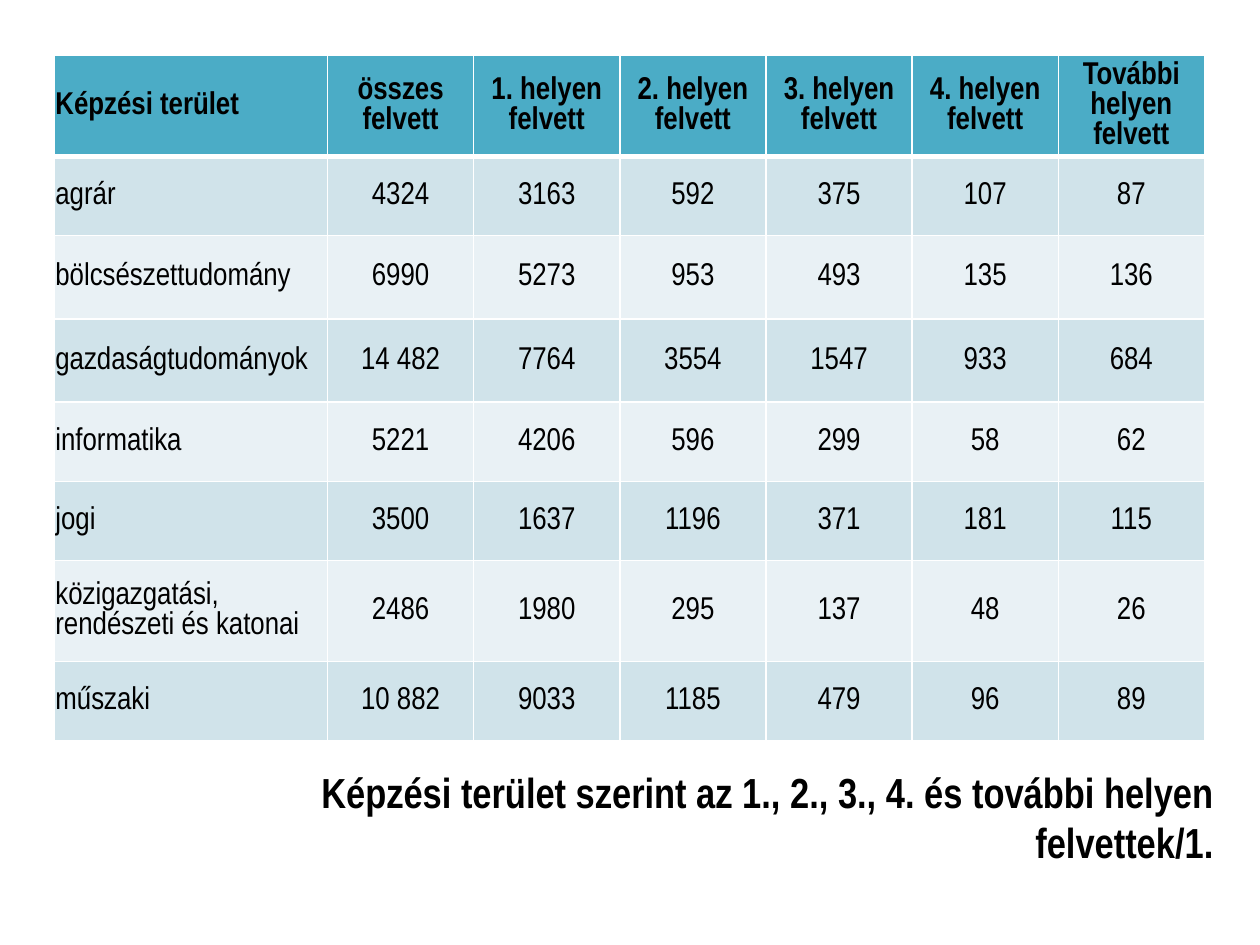
from lxml.etree import SubElement
from pptx import Presentation
from pptx.dml.color import RGBColor
from pptx.enum.text import MSO_ANCHOR, PP_ALIGN
from pptx.oxml.ns import qn
from pptx.util import Inches, Pt

HEADINGS = ["Képzési terület", "összes felvett", "1. helyen felvett", "2. helyen felvett",
            "3. helyen felvett", "4. helyen felvett", "További helyen felvett"]
ADMISSIONS = [
    ["agrár", "4324", "3163", "592", "375", "107", "87"],
    ["bölcsészettudomány", "6990", "5273", "953", "493", "135", "136"],
    ["gazdaságtudományok", "14 482", "7764", "3554", "1547", "933", "684"],
    ["informatika", "5221", "4206", "596", "299", "58", "62"],
    ["jogi", "3500", "1637", "1196", "371", "181", "115"],
    ["közigazgatási, rendészeti és katonai", "2486", "1980", "295", "137", "48", "26"],
    ["műszaki", "10 882", "9033", "1185", "479", "96", "89"],
]
CAPTION = "Képzési terület szerint az 1., 2., 3., 4. és további helyen felvettek/1."
FIELD_WIDTH, COUNT_WIDTH = 2.17, 1.16
ROW_HEIGHTS = [0.8, 0.63, 0.66, 0.66, 0.63, 0.63, 0.8, 0.63]
HEADER_FILL, BAND_FILLS = "4BACC6", ["D0E3EA", "E9F1F5"]
TEXT_COLOUR, RULE_COLOUR = "000000", "FFFFFF"
CELL_FORMAT = {"margin_left": Inches(0.01), "margin_right": Inches(0.01),
               "margin_top": Inches(0.01), "margin_bottom": 0,
               "vertical_anchor": MSO_ANCHOR.MIDDLE}
CAPTION_FORMAT = {"word_wrap": True, "vertical_anchor": MSO_ANCHOR.TOP,
                  "margin_left": Inches(0.1), "margin_right": Inches(0.1),
                  "margin_top": Inches(0.05), "margin_bottom": Inches(0.05)}


def colour(hex_value):
    """Turn a hex string into a colour."""
    return RGBColor.from_string(hex_value)


def apply(target, values):
    """Set every attribute named in a dict of format values."""
    for name, value in values.items():
        setattr(target, name, value)


def write(frame, wording, size, bold, alignment):
    """Put one formatted, single-spaced paragraph into a text frame."""
    frame.text = wording
    paragraph = frame.paragraphs[0]
    apply(paragraph, {"alignment": alignment, "line_spacing": 1.0, "space_before": Pt(0)})
    font = paragraph.runs[0].font
    apply(font, {"name": "Arial Narrow", "size": Pt(size), "bold": bold})
    font.color.rgb = colour(TEXT_COLOUR)


def rule_cell(cell, widths):
    """Draw the four borders of a cell, given in points by side."""
    properties = cell._tc.get_or_add_tcPr()
    for index, (side, width) in enumerate(widths.items()):
        border = properties.makeelement(qn(f"a:ln{side}"), {"w": str(Pt(width))})
        properties.insert(index, border)
        fill = SubElement(border, qn("a:solidFill"))
        SubElement(fill, qn("a:srgbClr"), val=RULE_COLOUR)


def add_admissions(slide, left, top):
    """Place the table of admissions with its corner at the given point."""
    rows = [HEADINGS] + ADMISSIONS
    widths = [FIELD_WIDTH] + [COUNT_WIDTH] * (len(HEADINGS) - 1)
    table = slide.shapes.add_table(len(rows), len(widths), left, top,
                                   Inches(sum(widths)), Inches(sum(ROW_HEIGHTS))).table
    for column, width in zip(table.columns, widths):
        column.width = Inches(width)
    for r, (entries, height) in enumerate(zip(rows, ROW_HEIGHTS)):
        table.rows[r].height = Inches(height)
        for c, entry in enumerate(entries):
            cell = table.cell(r, c)
            apply(cell, CELL_FORMAT)
            cell.fill.solid()
            cell.fill.fore_color.rgb = colour(BAND_FILLS[(r - 1) % 2] if r else HEADER_FILL)
            write(cell.text_frame, entry, 18, r == 0,
                  PP_ALIGN.CENTER if c else PP_ALIGN.LEFT)
            rule_cell(cell, {"L": 1, "R": 1, "T": 3 if r == 1 else 1, "B": 1 if r else 3})


def add_caption(slide, left, top, width, height):
    """Move the title below the table and set it flush right."""
    title = slide.shapes.title
    apply(title, {"left": left, "top": top, "width": width, "height": height})
    apply(title.text_frame, CAPTION_FORMAT)
    write(title.text_frame, CAPTION, 24, True, PP_ALIGN.RIGHT)


def main():
    """Build the slide and save it."""
    deck = Presentation()
    deck.slide_width, deck.slide_height = Inches(10), Inches(7.5)
    slide = deck.slides.add_slide(deck.slide_layouts[5])
    add_admissions(slide, Inches(0.43), Inches(0.44))
    add_caption(slide, Inches(1.54), Inches(6.03), Inches(8.19), Inches(1.21))
    deck.save("out.pptx")


if __name__ == "__main__":
    main()
